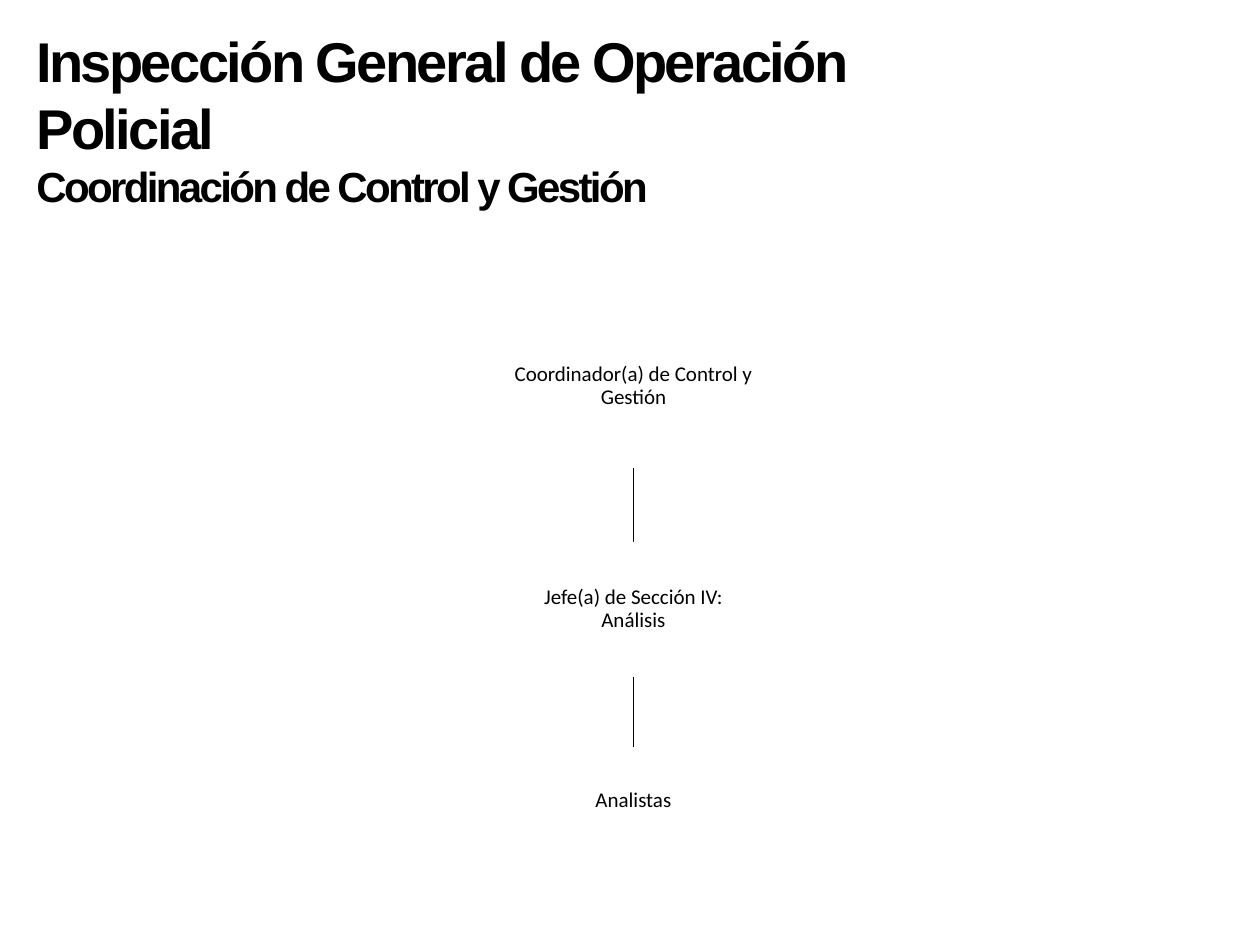
import pptx
import pptx.dml.color
import pptx.enum.shapes
import pptx.enum.text
import pptx.oxml.ns
import pptx.util
from lxml import etree

Pt = pptx.util.Pt
BLACK = pptx.dml.color.RGBColor(0, 0, 0)
WHITE = pptx.dml.color.RGBColor(255, 255, 255)
CENTER_X = 362
INSET = 0.7

TITLE_LINES = [
    ("Inspección General de Operación Policial", 32),
    ("Coordinación de Control y Gestión", 24),
]
POSITIONS = [
    ("Coordinador(a) de Control y Gestión", 174, 170, 93.4, None),
    ("Jefe(a) de Sección IV: Análisis", 309.6, 141.8, 77, WHITE),
    ("Analistas", 427, 141.8, 61.2, WHITE),
]


def format_run(r, font, size, bold=False):
    r.font.name = font
    r.font.size = Pt(size)
    r.font.bold = bold
    r.font.color.rgb = BLACK


def add_title(s):
    sp = s.shapes.add_textbox(Pt(13.7), Pt(11.5), Pt(537), Pt(113.8))
    tf = sp.text_frame
    tf.word_wrap = True
    tf.text = "\n".join(text for text, size in TITLE_LINES)
    for p, (text, size) in zip(tf.paragraphs, TITLE_LINES):
        r = p.runs[0]
        format_run(r, "Arial", size, bold=True)
        r.font._element.set("spc", "-150")


def add_position(s, text, top, width, height, fill):
    sp = s.shapes.add_shape(
        pptx.enum.shapes.MSO_SHAPE.RECTANGLE,
        Pt(CENTER_X - width / 2), Pt(top), Pt(width), Pt(height))
    sp.shadow.inherit = False
    sp.line.fill.background()
    if fill is None:
        sp.fill.background()
    else:
        sp.fill.solid()
        sp.fill.fore_color.rgb = fill
    tf = sp.text_frame
    tf.word_wrap = True
    tf.vertical_anchor = pptx.enum.text.MSO_ANCHOR.MIDDLE
    tf.margin_left = tf.margin_right = Pt(INSET)
    tf.margin_top = tf.margin_bottom = Pt(INSET)
    tf.text = text
    p = tf.paragraphs[0]
    p.alignment = pptx.enum.text.PP_ALIGN.CENTER
    p.line_spacing = 0.9
    p.space_after = Pt(4.2)
    format_run(p.runs[0], "Calibri", 12)


def add_link(s, top, bottom):
    line = s.shapes.add_connector(
        pptx.enum.shapes.MSO_CONNECTOR.STRAIGHT,
        Pt(CENTER_X), Pt(top), Pt(CENTER_X), Pt(bottom))
    line.line.color.rgb = BLACK
    line.line.width = Pt(1)
    etree.SubElement(line._element.spPr, pptx.oxml.ns.qn("a:effectLst"))


def main():
    prs = pptx.Presentation()
    prs.slide_width, prs.slide_height = Pt(720), Pt(540)
    s = prs.slides.add_slide(prs.slide_layouts[6])
    add_title(s)
    for upper, lower in zip(POSITIONS, POSITIONS[1:]):
        add_link(s, upper[1] + upper[3], lower[1])
    for position in POSITIONS:
        add_position(s, *position)
    prs.save("out.pptx")


if __name__ == "__main__":
    main()
